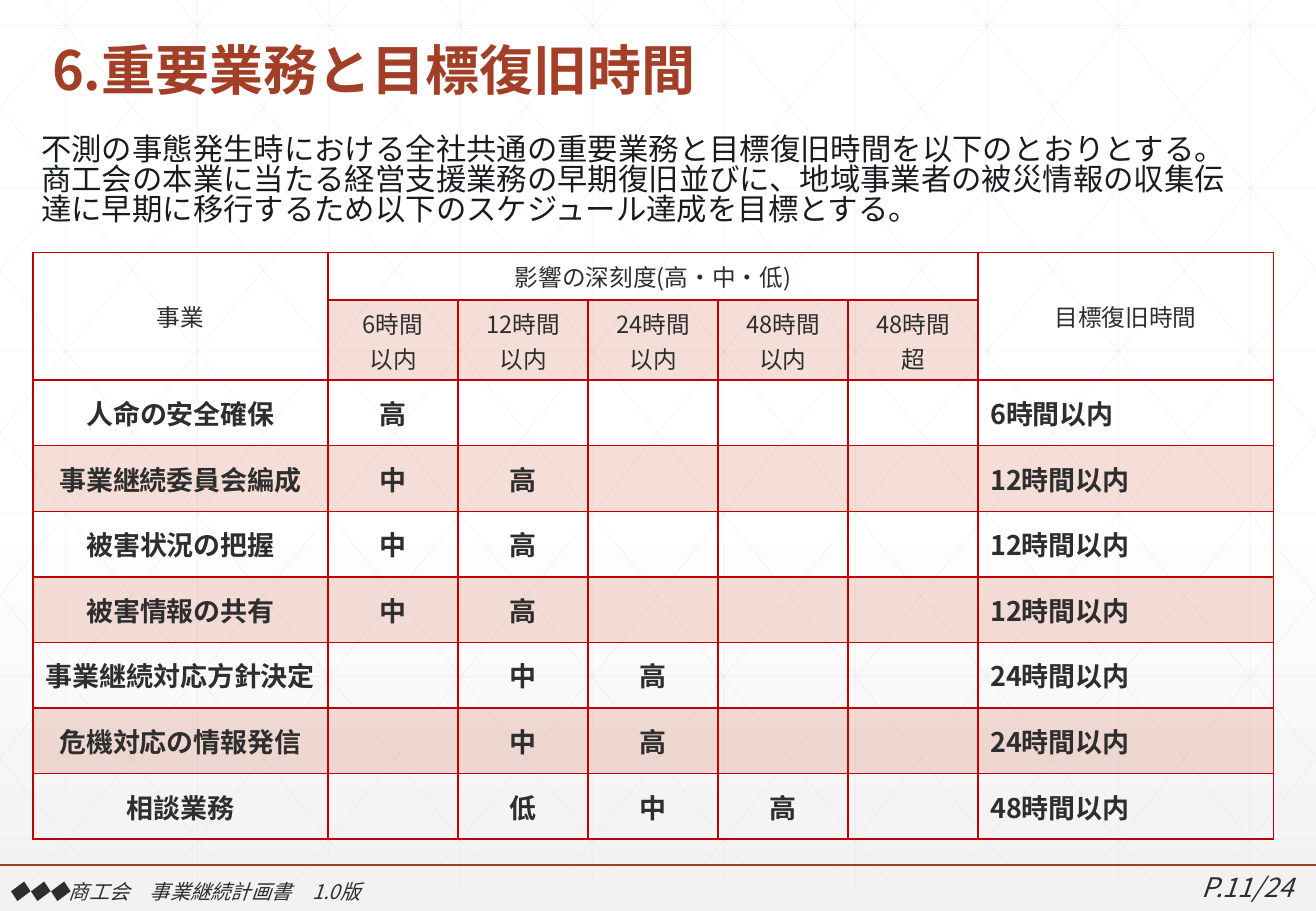
from lxml import etree
from copy import deepcopy
from pptx import Presentation
from pptx.dml.color import RGBColor
from pptx.enum.shapes import MSO_CONNECTOR as Connector
from pptx.enum.text import MSO_ANCHOR as Anchor, PP_ALIGN as Align
from pptx.oxml import parse_xml
from pptx.oxml.ns import nsdecls, qn
from pptx.util import Inches, Pt

FONT = "Noto Sans CJK JP"
WHITE = RGBColor(0xFF, 0xFF, 0xFF)
PALE_GRAY = RGBColor(0xF2, 0xF2, 0xF2)
GRID_GRAY = RGBColor(0xD9, 0xD9, 0xD9)
RUST = RGBColor(0xA4, 0x3F, 0x27)
BAND = RGBColor(0xD1, 0x5A, 0x3E)
BORDER = RGBColor(0xC0, 0x00, 0x00)
DARK = RGBColor(0x2D, 0x2E, 0x2D)
INK = RGBColor(0x18, 0x1C, 0x1E)

WIDTH, HEIGHT = 10.83, 7.5
GRID_BOTTOM = 7.29

INTRODUCTION = [
    "不測の事態発生時における全社共通の重要業務と目標復旧時間を以下のとおりとする。",
    "商工会の本業に当たる経営支援業務の早期復旧並びに、地域事業者の被災情報の収集伝達に"
    "早期に移行するため以下のスケジュール達成を目標とする。",
]
PERIODS = ["6時間\n以内", "12時間\n以内", "24時間\n以内", "48時間\n以内", "48時間\n超"]
# Task, severity in each period, recovery target
TASKS = [
    ("人命の安全確保", ["高", "", "", "", ""], "6時間以内"),
    ("事業継続委員会編成", ["中", "高", "", "", ""], "12時間以内"),
    ("被害状況の把握", ["中", "高", "", "", ""], "12時間以内"),
    ("被害情報の共有", ["中", "高", "", "", ""], "12時間以内"),
    ("事業継続対応方針決定", ["", "中", "高", "", ""], "24時間以内"),
    ("危機対応の情報発信", ["", "中", "高", "", ""], "24時間以内"),
    ("相談業務", ["", "低", "中", "高", ""], "48時間以内"),
]
COLUMN_WIDTHS = [2.43] + [1.07] * 5 + [2.43]
ROW_HEIGHTS = [0.39, 0.66] + [0.54] * len(TASKS)


def set_alpha(fill_parent, percent):
    color = fill_parent.find(qn("a:solidFill"))[0]
    etree.SubElement(color, qn("a:alpha")).set("val", str(percent * 1000))


def style_text(text_frame, size, color, align=Align.LEFT, bold=False, italic=False):
    for paragraph in text_frame.paragraphs:
        paragraph.alignment = align
        font = paragraph.font
        font.name, font.size = FONT, Pt(size)
        font.bold, font.italic = bold, italic
        font.color.rgb = color
        # East Asian typeface follows the Latin one
        latin = paragraph._p.pPr.find(qn("a:defRPr")).find(qn("a:latin"))
        latin.addnext(parse_xml(f'<a:ea {nsdecls("a")} typeface="{FONT}"/>'))
        for run in paragraph.runs:
            run.font.language_id = None


def add_text(slide, box, text, size, color, spacing=1.0, anchor=Anchor.TOP, **style):
    text_frame = slide.shapes.add_textbox(*map(Inches, box)).text_frame
    text_frame.word_wrap = True
    text_frame.vertical_anchor = anchor
    text_frame.text = text
    style_text(text_frame, size, color, **style)
    for paragraph in text_frame.paragraphs:
        paragraph.line_spacing = spacing


def add_line(slide, start, end, color, width, alpha=100):
    line = slide.shapes.add_connector(Connector.STRAIGHT, *map(Inches, start + end))
    line.line.color.rgb = color
    line.line.width = Pt(width)
    properties = line._element.spPr
    if alpha < 100:
        set_alpha(properties.find(qn("a:ln")), alpha)
    etree.SubElement(properties, qn("a:effectLst"))


def add_background(slide):
    fill = slide.background.fill
    fill.gradient()
    fill.gradient_angle = 270
    first, last = fill.gradient_stops
    first.color.rgb, first.position = WHITE, 0
    last.color.rgb, last.position = PALE_GRAY, 1
    stops = slide.background._cSld.find(".//" + qn("a:gsLst"))
    middle = deepcopy(stops[0])
    middle.set("pos", "53000")
    stops.insert(1, middle)


def add_grid(slide):
    def grid_line(start, end):
        add_line(slide, start, end, GRID_GRAY, 0.5, 25)

    step = WIDTH / 10
    for column in range(10):
        x = step * (column + 0.5)
        grid_line((x, 0), (x, GRID_BOTTOM))
    for row in range(6):
        y = 0.21 + 1.34 * row
        grid_line((0, y), (WIDTH, y))
    # Diagonals cut at the slide edges, each with its mirror image
    slope = 7.5 / 6.06
    for index in range(-5, 10):
        origin = 0.37 + step * index
        left = max(origin, 0)
        right = min(origin + GRID_BOTTOM / slope, WIDTH)
        top, bottom = (left - origin) * slope, (right - origin) * slope
        grid_line((left, top), (right, bottom))
        grid_line((WIDTH - left, top), (WIDTH - right, bottom))


def style_cell(cell, text, size, align, bold, banded):
    cell.text = text
    cell.vertical_anchor = Anchor.MIDDLE
    style_text(cell.text_frame, size, DARK, align, bold)
    properties = cell._tc.get_or_add_tcPr()
    for side in ("lnL", "lnR", "lnT", "lnB"):
        properties.append(parse_xml(
            f'<a:{side} {nsdecls("a")} w="12700"><a:solidFill>'
            f'<a:srgbClr val="{BORDER}"/></a:solidFill></a:{side}>'))
    if banded:
        cell.fill.solid()
        cell.fill.fore_color.rgb = BAND
        set_alpha(properties, 20)
    else:
        cell.fill.background()


def add_schedule(slide):
    rows = [["事業", "影響の深刻度(高・中・低)", "", "", "", "", "目標復旧時間"],
            ["", *PERIODS, ""]]
    rows += [[task, *levels, target] for task, levels, target in TASKS]
    last = len(COLUMN_WIDTHS) - 1
    box = (0.27, 2.08, sum(COLUMN_WIDTHS), sum(ROW_HEIGHTS))
    table = slide.shapes.add_table(len(rows), last + 1, *map(Inches, box)).table
    table.first_row = table.horz_banding = False
    for column, width in zip(table.columns, COLUMN_WIDTHS):
        column.width = Inches(width)
    for row, height in zip(table.rows, ROW_HEIGHTS):
        row.height = Inches(height)
    for r, texts in enumerate(rows):
        body = r >= 2
        for c, text in enumerate(texts):
            align = Align.LEFT if body and c == last else Align.CENTER
            banded = r % 2 == 1 and (body or 0 < c < last)
            style_cell(table.cell(r, c), text, 16 if body else 14, align, body, banded)
    # Header spans
    table.cell(0, 0).merge(table.cell(1, 0))
    table.cell(0, 1).merge(table.cell(0, last - 1))
    table.cell(0, last).merge(table.cell(1, last))


def main():
    presentation = Presentation()
    presentation.slide_width = Inches(WIDTH)
    presentation.slide_height = Inches(HEIGHT)
    slide = presentation.slides.add_slide(presentation.slide_layouts[6])

    # Backdrop
    add_background(slide)
    add_grid(slide)

    # Footer
    add_line(slide, (0, 7.12), (WIDTH, 7.12), RUST, 1)
    add_text(slide, (9.17, 7.12, 1.57, 0.37), "P.11/24", 16, DARK,
             align=Align.RIGHT, italic=True)
    add_text(slide, (-0.03, 7.19, 5.27, 0.3), "◆◆◆商工会　事業継続計画書\t1.0版",
             12, DARK, italic=True)

    # Title, schedule and introduction
    add_text(slide, (0.33, 0.16, 10.15, 0.73), "6.重要業務と目標復旧時間", 32, RUST,
             spacing=0.9, anchor=Anchor.BOTTOM, bold=True)
    add_schedule(slide)
    add_text(slide, (0.24, 1.07, 10.15, 1.01), "\n".join(INTRODUCTION), 18, INK,
             spacing=0.83)

    presentation.save("out.pptx")


if __name__ == "__main__":
    main()
